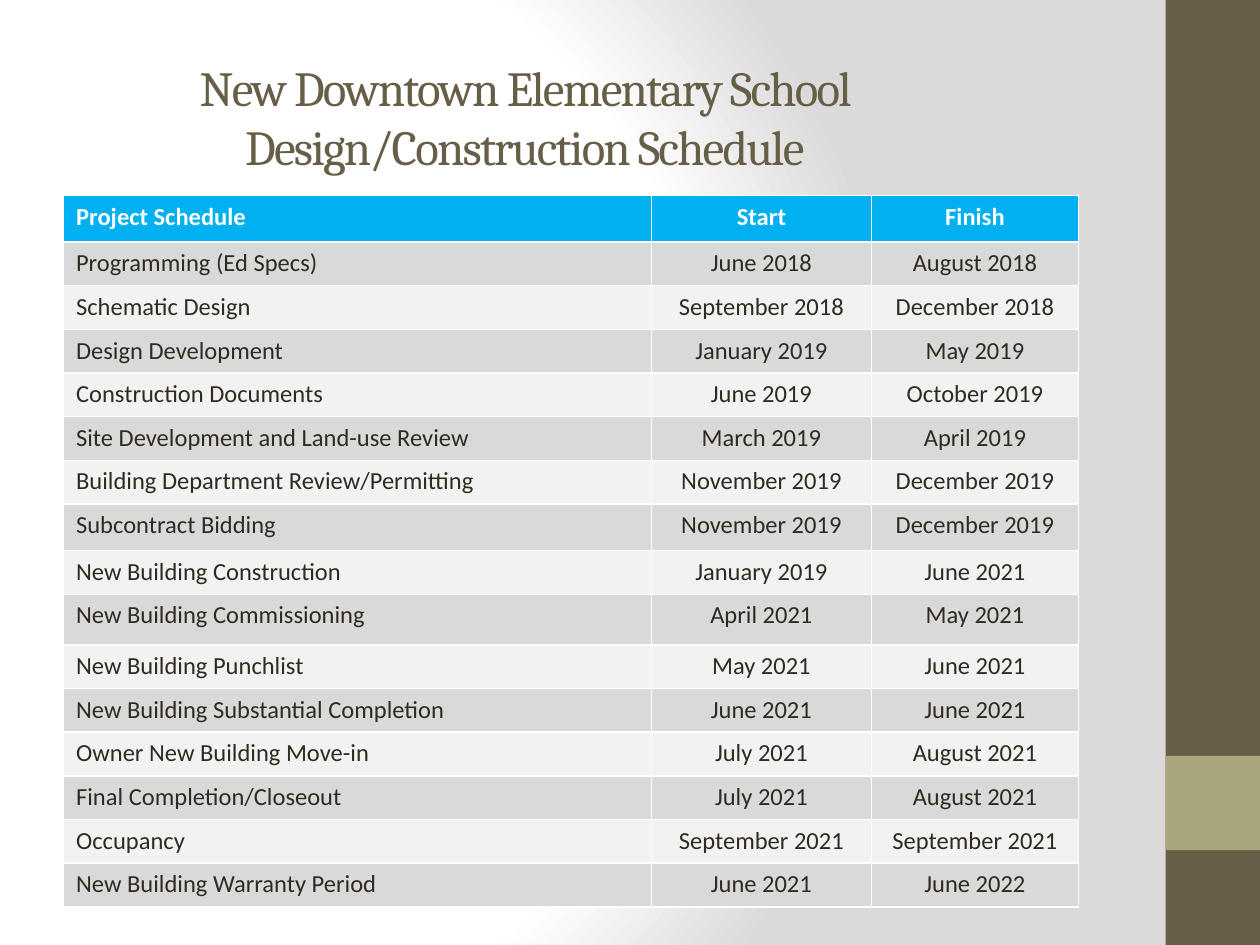
from lxml import etree
from pptx import Presentation
from pptx.dml.color import RGBColor
from pptx.enum.shapes import MSO_SHAPE as SHAPE
from pptx.enum.text import MSO_ANCHOR as ANCHOR, PP_ALIGN as ALIGN
from pptx.oxml import parse_xml
from pptx.oxml.ns import qn
from pptx.util import Cm, Pt

BROWN = RGBColor(0x67, 0x5E, 0x47)
OLIVE = RGBColor(0xA9, 0xA5, 0x7C)
WHITE = RGBColor(0xFF, 0xFF, 0xFF)
GREY = RGBColor(0xDA, 0xDA, 0xDA)
HEADER_BLUE = RGBColor(0x00, 0xB0, 0xF0)
BAND_DARK = RGBColor(0xD9, 0xD9, 0xD9)
BAND_LIGHT = RGBColor(0xF2, 0xF2, 0xF2)
INK = RGBColor(0x2F, 0x2B, 0x20)

TITLE = "New Downtown Elementary School Design/Construction Schedule"
SCHEDULE = [
    ("Project Schedule", "Start", "Finish"),
    ("Programming (Ed Specs)", "June 2018", "August 2018"),
    ("Schematic Design", "September 2018", "December 2018"),
    ("Design Development", "January 2019", "May 2019"),
    ("Construction Documents", "June 2019", "October 2019"),
    ("Site Development and Land-use Review", "March 2019", "April 2019"),
    ("Building Department Review/Permitting", "November 2019", "December 2019"),
    ("Subcontract Bidding", "November 2019", "December 2019"),
    ("New Building Construction", "January 2019", "June 2021"),
    ("New Building Commissioning", "April 2021", "May 2021"),
    ("New Building Punchlist", "May 2021", "June 2021"),
    ("New Building Substantial Completion", "June 2021", "June 2021"),
    ("Owner New Building Move-in", "July 2021", "August 2021"),
    ("Final Completion/Closeout", "July 2021", "August 2021"),
    ("Occupancy", "September 2021", "September 2021"),
    ("New Building Warranty Period", "June 2021", "June 2022"),
]
COLUMN_WIDTHS = (11.85, 4.44, 4.17)
ROW_HEIGHT = 0.88
TALL_ROWS = {0: 0.94, 7: 0.94, 9: 1.02}


def set_background(s):
    """Radial gradient, white at the left and grey at the right."""
    s.background.fill.gradient()
    old = s.background._cSld.find(".//" + qn("a:gradFill"))
    stops = "".join(
        f'<a:gs pos="{pos}000"><a:srgbClr val="{color}"/></a:gs>'
        for pos, color in ((0, WHITE), (75, WHITE), (100, GREY)))
    old.getparent().replace(old, parse_xml(
        '<a:gradFill xmlns:a="http://schemas.openxmlformats.org/drawingml/2006/main"'
        f' rotWithShape="1"><a:gsLst>{stops}</a:gsLst><a:path path="circle">'
        '<a:fillToRect l="20000" t="50000" r="100000" b="50000"/></a:path></a:gradFill>'))


def add_block(s, left, top, width, height, color):
    sp = s.shapes.add_shape(SHAPE.RECTANGLE, Cm(left), Cm(top), Cm(width), Cm(height))
    sp.shadow.inherit = False
    sp.fill.solid()
    sp.fill.fore_color.rgb = color
    sp.line.fill.background()


def format_run(r, font, size, color, bold=False):
    r.font.name = font
    r.font.size = Pt(size)
    r.font.color.rgb = color
    r.font.bold = bold


def add_title(s):
    tf = s.shapes.add_textbox(Cm(0), Cm(0.76), Cm(21.16), Cm(3.18)).text_frame
    tf.word_wrap = True
    tf.vertical_anchor = ANCHOR.MIDDLE
    tf.text = TITLE
    p = tf.paragraphs[0]
    p.alignment = ALIGN.CENTER
    r = p.runs[0]
    format_run(r, "Cambria", 28, BROWN)
    r.font._element.set("spc", "-100")


def add_borders(cell):
    tc_pr = cell._tc.get_or_add_tcPr()
    for i, side in enumerate(("lnL", "lnR", "lnT", "lnB")):
        ln = etree.Element(qn(f"a:{side}"), w=str(Pt(1)))
        fill = etree.SubElement(ln, qn("a:solidFill"))
        etree.SubElement(fill, qn("a:srgbClr"), val=str(WHITE))
        tc_pr.insert(i, ln)


def fill_cell(cell, text, row, col):
    is_header = row == 0
    cell.fill.solid()
    cell.fill.fore_color.rgb = (
        HEADER_BLUE if is_header else BAND_DARK if row % 2 else BAND_LIGHT)
    add_borders(cell)
    cell.text_frame.text = text
    p = cell.text_frame.paragraphs[0]
    p.alignment = ALIGN.CENTER if col else ALIGN.LEFT
    format_run(p.runs[0], "Calibri", 14, WHITE if is_header else INK, is_header)


def add_schedule(s):
    heights = [TALL_ROWS.get(i, ROW_HEIGHT) for i in range(len(SCHEDULE))]
    table = s.shapes.add_table(
        len(SCHEDULE), len(COLUMN_WIDTHS), Cm(1.28), Cm(3.94),
        Cm(sum(COLUMN_WIDTHS)), Cm(sum(heights))).table
    for column, width in zip(table.columns, COLUMN_WIDTHS):
        column.width = Cm(width)
    for i, (height, texts) in enumerate(zip(heights, SCHEDULE)):
        table.rows[i].height = Cm(height)
        for j, text in enumerate(texts):
            fill_cell(table.cell(i, j), text, i, j)


def main():
    prs = Presentation()
    prs.slide_width, prs.slide_height = Cm(25.4), Cm(19.05)
    s = prs.slides.add_slide(prs.slide_layouts[6])
    set_background(s)
    add_block(s, 23.5, 0, 1.9, 19.05, BROWN)
    add_block(s, 23.5, 15.24, 1.9, 1.9, OLIVE)
    add_title(s)
    add_schedule(s)
    prs.save("out.pptx")


if __name__ == "__main__":
    main()
